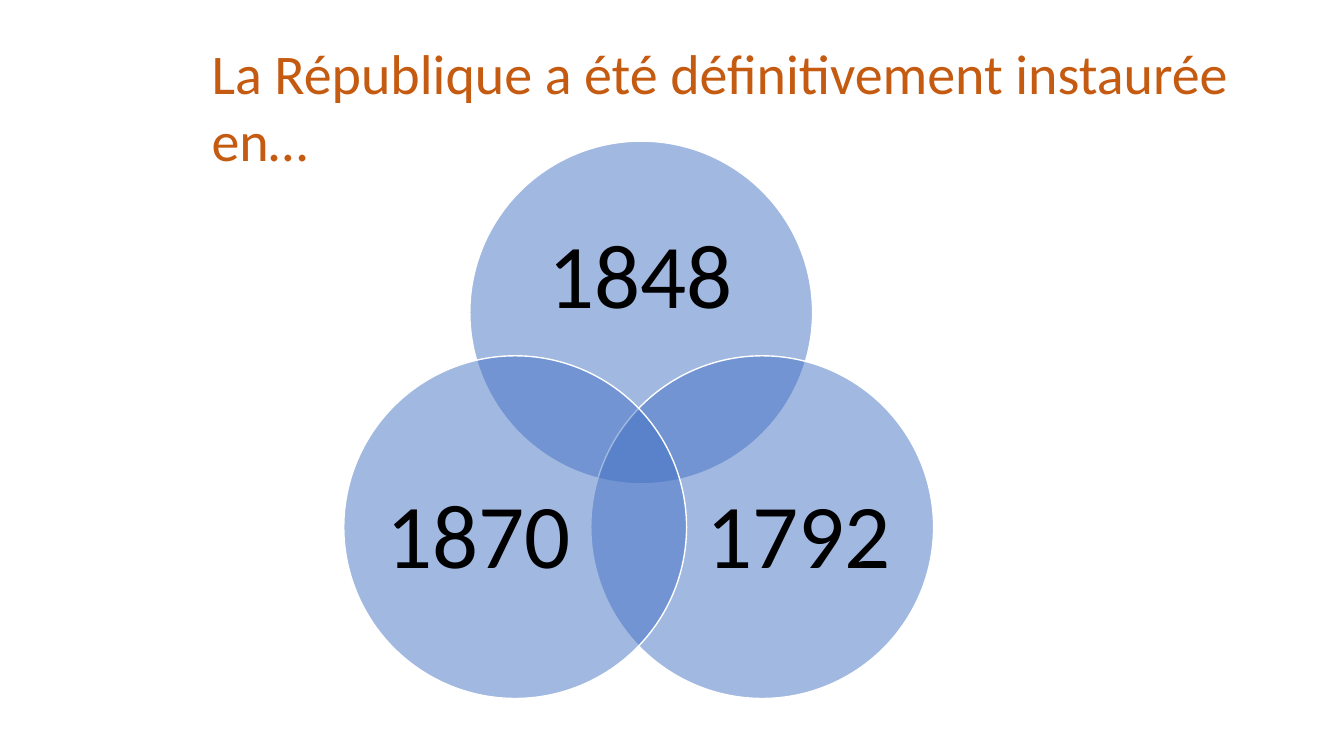
from lxml.etree import SubElement
from pptx import Presentation
from pptx.dml.color import RGBColor
from pptx.enum.shapes import MSO_SHAPE
from pptx.enum.text import MSO_ANCHOR, PP_ALIGN
from pptx.oxml.ns import qn
from pptx.util import Inches, Pt

COLORS = {"circle": "4472C4", "outline": "FFFFFF", "year": "000000", "title": "C55A11"}
DIAMETER = 3.4

prs = Presentation()
prs.slide_width, prs.slide_height = Inches(13.33), Inches(7.5)
slide = prs.slides.add_slide(prs.slide_layouts[6])


def add_text(text, box, size, color, align=PP_ALIGN.LEFT, anchor=MSO_ANCHOR.TOP,
             margins=(0.1, 0.05), spacing=1.0):
    tf = slide.shapes.add_textbox(*map(Inches, box)).text_frame
    tf.word_wrap = True
    tf.vertical_anchor = anchor
    tf.margin_left = tf.margin_right = Inches(margins[0])
    tf.margin_top = tf.margin_bottom = Inches(margins[1])
    p = tf.paragraphs[0]
    p.alignment, p.line_spacing = align, spacing
    r = p.add_run()
    r.text = text
    r.font.name, r.font.size = "Calibri", Pt(size)
    r.font.color.rgb = RGBColor.from_string(COLORS[color])


# Year, circle corner, label box
venn = [
    ("1848", (4.66, 1.4), (5.11, 2, 2.49, 1.53)),
    ("1792", (5.86, 3.53), (6.9, 4.41, 2.04, 1.87)),
    ("1870", (3.41, 3.53), (3.73, 4.41, 2.04, 1.87)),
]
for year, (x, y), label_box in venn:
    sp = slide.shapes.add_shape(MSO_SHAPE.OVAL, Inches(x), Inches(y),
                                Inches(DIAMETER), Inches(DIAMETER))
    sp.shadow.inherit = False
    sp.fill.solid()
    sp.fill.fore_color.rgb = RGBColor.from_string(COLORS["circle"])
    fill_color = sp._element.spPr.find(qn("a:solidFill")).find(qn("a:srgbClr"))
    SubElement(fill_color, qn("a:alpha"), val="50000")
    sp.line.color.rgb = RGBColor.from_string(COLORS["outline"])
    sp.line.width = Pt(1)
    add_text(year, label_box, 65, "year", align=PP_ALIGN.CENTER,
             anchor=MSO_ANCHOR.MIDDLE, margins=(0, 0), spacing=0.9)

add_text("La République a été définitivement instaurée en…",
         (2, 0.33, 10.67, 1.45), 40, "title")

prs.save("out.pptx")
